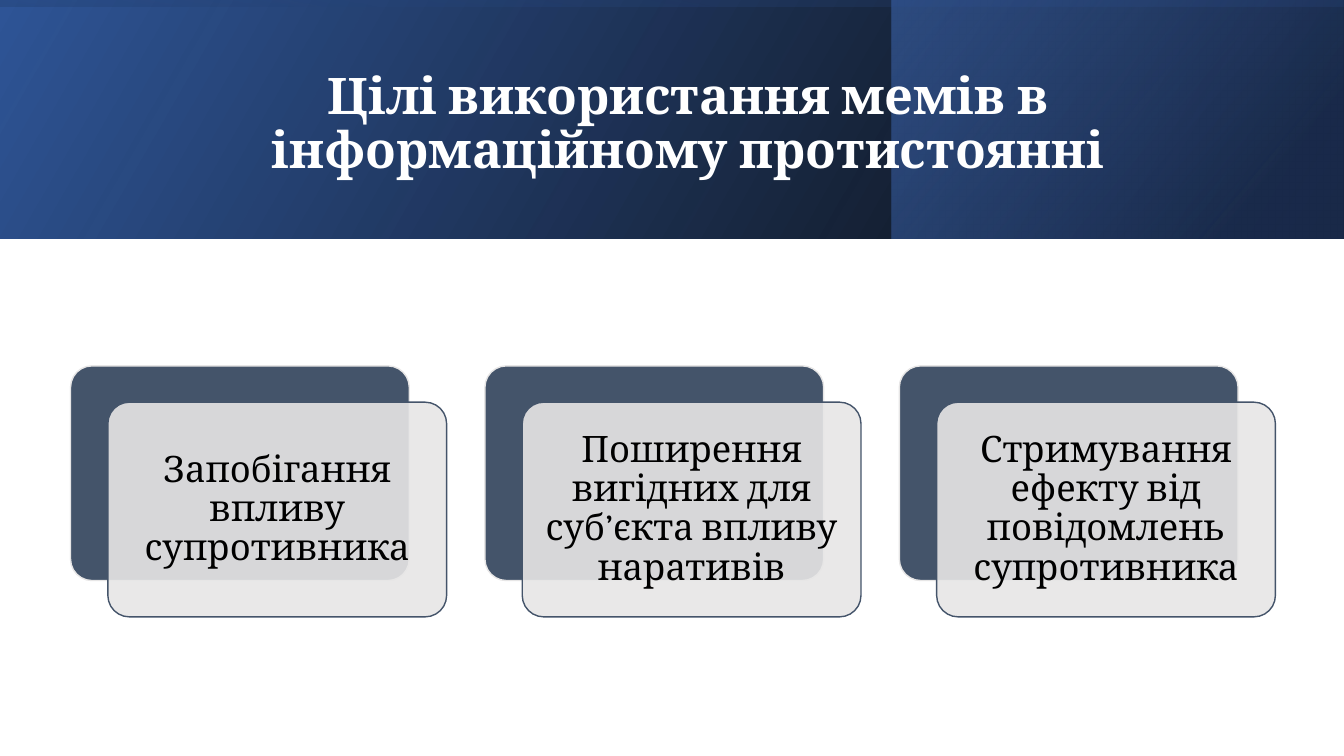
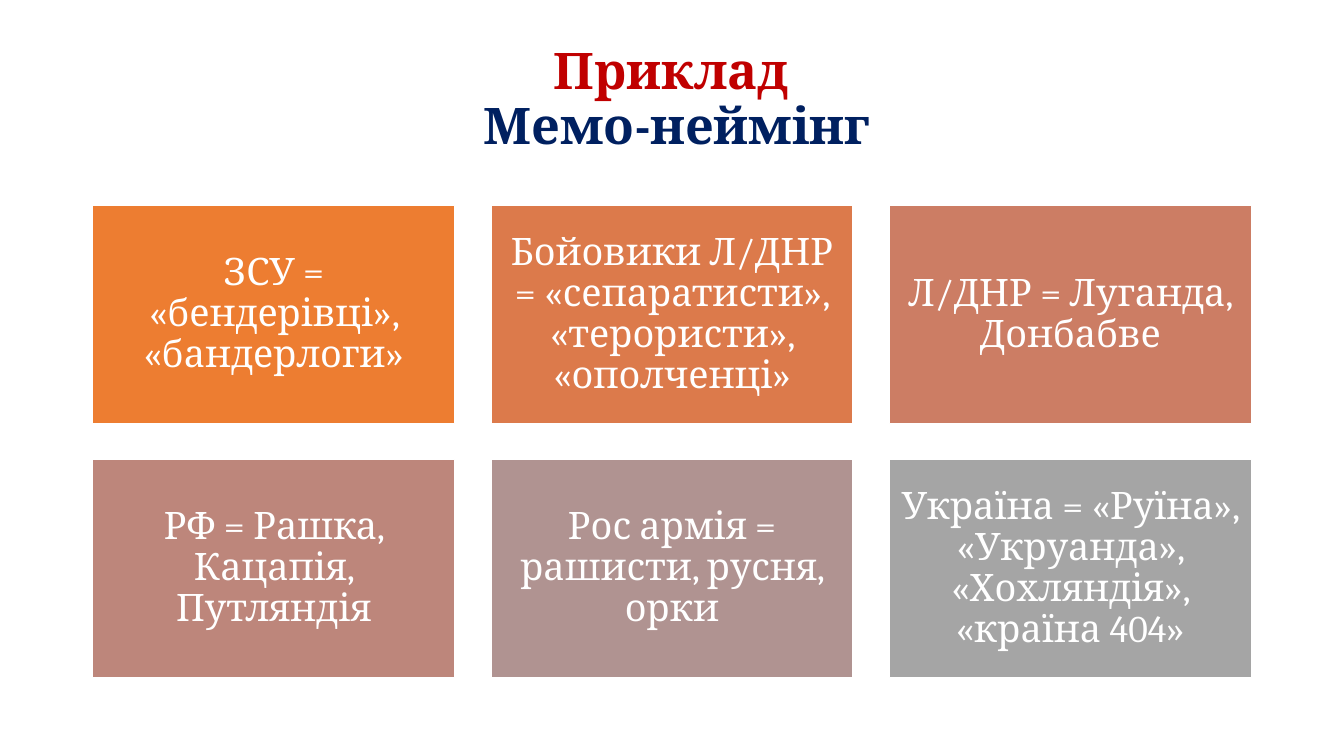
import dataclasses

import pptx
import pptx.dml.color
import pptx.enum.shapes
import pptx.enum.text
import pptx.oxml.ns
import pptx.util
from lxml import etree

Inches = pptx.util.Inches
Shape = pptx.enum.shapes.MSO_SHAPE


@dataclasses.dataclass(frozen=True)
class Theme:
    """Colours, font and type sizes shared by the slides."""
    font: str = "Cambria"
    title_size: int = 36
    card_size: int = 26
    tile_size: int = 27
    white: str = "FFFFFF"
    black: str = "000000"
    red: str = "C00000"
    navy: str = "002060"
    blue: str = "2F5597"
    deep_blue: str = "203864"
    bright_blue: str = "4472C4"
    slate: str = "44546A"
    pale: str = "E7E6E6"
    tiles: tuple = ("ED7D31", "DC7A4B", "CC7D64", "BD867B", "B09391", "A5A5A5")


def rgb(color):
    """Turn a hex string into a colour."""
    return pptx.dml.color.RGBColor.from_string(color)


class Deck:
    """Holds the theme, the presentation and the current slide."""

    def __init__(self, theme):
        """Start an empty widescreen presentation."""
        self.theme = theme
        self.presentation = pptx.Presentation()
        self.presentation.slide_width = Inches(13.33)
        self.presentation.slide_height = Inches(7.5)
        self.slide = None

    def new_slide(self):
        """Add a blank slide and make it current."""
        self.slide = self.presentation.slides.add_slide(self.presentation.slide_layouts[6])

    def shape(self, kind, box, fill=None, line=None):
        """Add a preset shape with a solid fill and an outline."""
        shape = self.slide.shapes.add_shape(kind, *map(Inches, box))
        shape.shadow.inherit = False
        if fill:
            shape.fill.solid()
            shape.fill.fore_color.rgb = rgb(fill)
        if line:
            shape.line.color.rgb = rgb(line)
            shape.line.width = pptx.util.Pt(1)
        else:
            shape.line.fill.background()
        return shape

    def opacity(self, shape, *percentages):
        """Set the opacity of each fill colour in order."""
        colors = shape.element.xpath(
            "./p:spPr/a:solidFill/a:srgbClr | ./p:spPr/a:gradFill//a:srgbClr")
        for color, percentage in zip(colors, percentages):
            alpha = etree.SubElement(color, pptx.oxml.ns.qn("a:alpha"))
            alpha.set("val", str(percentage * 1000))

    def gradient_band(self, box, angle, stops, rotation=0):
        """Add a mirrored rectangle with a two-stop translucent gradient."""
        shape = self.shape(Shape.RECTANGLE, box)
        shape.rotation = rotation
        shape.element.spPr.find(pptx.oxml.ns.qn("a:xfrm")).set("flipH", "1")
        shape.fill.gradient()
        shape.fill.gradient_angle = angle
        for stop, (position, color, _) in zip(shape.fill.gradient_stops, stops):
            stop.position = position
            stop.color.rgb = rgb(color)
        self.opacity(shape, *(percentage for _, _, percentage in stops))

    def set_text(self, shape, lines, size, bold=False):
        """Fill a shape with centred lines, each a list of text and colour runs."""
        frame = shape.text_frame
        frame.word_wrap = True
        frame.vertical_anchor = pptx.enum.text.MSO_ANCHOR.MIDDLE
        paragraph = frame.paragraphs[0]
        paragraph.alignment = pptx.enum.text.PP_ALIGN.CENTER
        paragraph.line_spacing = 0.9
        for index, line in enumerate(lines):
            if index:
                paragraph.add_line_break()
            for text, color in line:
                run = paragraph.add_run()
                run.text = text
                run.font.name = self.theme.font
                run.font.size = pptx.util.Pt(size)
                run.font.bold = bold
                run.font.color.rgb = rgb(color)

    def title(self, box, lines):
        """Add the slide title."""
        shape = self.slide.shapes.add_textbox(*map(Inches, box))
        self.set_text(shape, lines, self.theme.title_size, bold=True)

    def label(self, shape, text, size, color):
        """Put one label inside a shape with even margins."""
        frame = shape.text_frame
        frame.margin_left = frame.margin_right = Inches(0.11)
        frame.margin_top = frame.margin_bottom = Inches(0.11)
        self.set_text(shape, [[(text, color)]], size)

    def card(self, left, top, text):
        """Add a translucent card over an offset dark panel."""
        theme, width, height = self.theme, 3.36, 2.13
        panel = self.shape(Shape.ROUNDED_RECTANGLE, (left, top, width, height),
                           theme.slate, theme.pale)
        front = self.shape(Shape.ROUNDED_RECTANGLE, (left + 0.37, top + 0.36, width, height),
                           theme.pale, theme.slate)
        for shape in (panel, front):
            shape.adjustments[0] = 0.1
        self.opacity(front, 90)
        self.label(front, text, theme.card_size, theme.black)

    def tile(self, left, top, color, text):
        """Add a coloured rectangle with a white label."""
        shape = self.shape(Shape.RECTANGLE, (left, top, 3.59, 2.16), color, self.theme.white)
        self.label(shape, text, self.theme.tile_size, self.theme.white)


def goals_slide(deck):
    """Build the slide of goals."""
    theme = deck.theme
    deck.new_slide()
    deck.gradient_band((0, 0, 13.33, 2.37), 30, [(0, theme.black, 96), (1, theme.blue, 100)])
    deck.gradient_band((8.84, 0, 4.48, 2.37), 40,
                       [(0.19, theme.deep_blue, 68), (1, theme.bright_blue, 48)])
    deck.gradient_band((5.48, -5.48, 2.37, 13.33), 10,
                       [(0.23, theme.blue, 16), (0.99, theme.black, 45)], rotation=270)
    deck.title((1.51, 0.38, 10.63, 1.72),
               [[("Цілі використання мемів в інформаційному протистоянні", theme.white)]])
    goals = (
        "Запобігання впливу супротивника",
        "Поширення вигідних для суб’єкта впливу наративів",
        "Стримування ефекту від повідомлень супротивника",
    )
    for column, goal in enumerate(goals):
        deck.card(0.7 + column * 4.11, 3.63, goal)


def naming_slide(deck):
    """Build the slide of naming examples."""
    theme = deck.theme
    deck.new_slide()
    deck.title((0.91, 0.38, 11.5, 1.24),
               [[("Приклад", theme.red)], [(" ", theme.red), ("Мемо-неймінг", theme.navy)]])
    names = (
        "ЗСУ = «бендерівці», «бандерлоги»",
        "Бойовики Л/ДНР = «сепаратисти», «терористи», «ополченці»",
        "Л/ДНР = Луганда, Донбабве",
        "РФ = Рашка, Кацапія, Путляндія",
        "Рос армія = рашисти, русня, орки",
        "Україна = «Руїна», «Укруанда», «Хохляндія», «країна 404»",
    )
    for index, (color, name) in enumerate(zip(theme.tiles, names)):
        row, column = divmod(index, 3)
        deck.tile(0.92 + column * 3.95, 2.04 + row * 2.52, color, name)


def main():
    """Build and save the presentation."""
    deck = Deck(Theme())
    goals_slide(deck)
    naming_slide(deck)
    deck.presentation.save("out.pptx")


if __name__ == "__main__":
    main()
